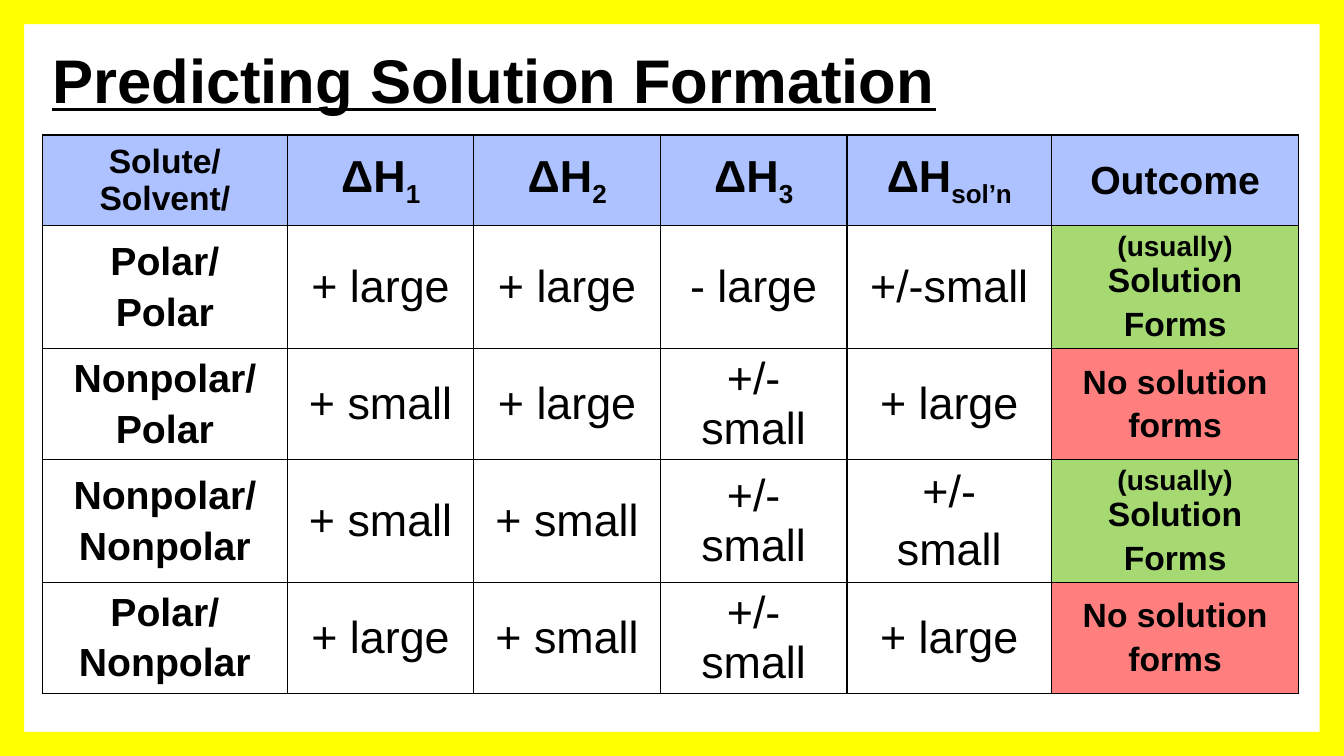
"""Build the slide that predicts solution formation from enthalpy terms."""
from dataclasses import dataclass

from lxml.etree import SubElement
from pptx import Presentation
from pptx.dml.color import RGBColor
from pptx.dml.fill import FillFormat
from pptx.enum.shapes import MSO_SHAPE
from pptx.enum.text import MSO_ANCHOR, PP_ALIGN
from pptx.oxml.ns import qn
from pptx.table import _Cell
from pptx.text.text import Font, _Paragraph
from pptx.util import Inches, Pt

BLACK, BLUE, GREEN, RED, YELLOW = "000000", "ADC2FF", "92D050", "FF0000", "FFFF00"
WIDTHS = [2.43, 1.85, 1.85, 1.85, 2.03, 2.45]
HEIGHTS = [0.9, 1.22, 1.1, 1.22, 1.1]


@dataclass
class Entry:
    lines: list[str]
    size: int
    bold: bool = True
    fill: str = ""
    alpha: int = 100
    sub: str = ""
    note: str = ""


def paint(fill: FillFormat, color: str) -> None:
    """Give a fill one solid colour."""
    fill.solid()
    fill.fore_color.rgb = RGBColor.from_string(color)


def style(font: Font, size: int, bold: bool) -> None:
    """Set the common font with a size and weight."""
    font.name = "Arial"
    font.size = Pt(size)
    font.bold = bold
    paint(font.fill, BLACK)


def border(cell: _Cell) -> None:
    """Draw a thin black line on all four sides of a cell."""
    props = cell._tc.get_or_add_tcPr()
    for side in ("lnL", "lnR", "lnT", "lnB"):
        line = SubElement(props, qn(f"a:{side}"), w=str(Pt(1)))
        SubElement(SubElement(line, qn("a:solidFill")), qn("a:srgbClr"), val=BLACK)


def lead(para: _Paragraph, note: str) -> None:
    """Start a paragraph with a smaller note on its own line."""
    run = para.add_run()
    run.text = note
    run.font.size = Pt(20)
    para.add_line_break()
    SubElement(para._p.find(qn("a:br")), qn("a:rPr"), sz="2000")


def write(cell: _Cell, entry: Entry) -> None:
    """Fill a table cell from its entry."""
    border(cell)
    if entry.fill:
        paint(cell.fill, entry.fill)
        if entry.alpha < 100:
            color = cell._tc.tcPr.find(qn("a:solidFill"))[0]
            SubElement(color, qn("a:alpha"), val=str(entry.alpha * 1000))
    else:
        cell.fill.background()
    cell.vertical_anchor = MSO_ANCHOR.MIDDLE
    frame = cell.text_frame
    for index, line in enumerate(entry.lines):
        para = frame.add_paragraph() if index else frame.paragraphs[0]
        para.alignment = PP_ALIGN.CENTER
        if index:
            para.space_before = Pt(round(entry.size * 0.18, 1))
        style(para.font, entry.size, entry.bold)
        if entry.note and not index:
            lead(para, entry.note)
        for part, text in enumerate(line.split("\v")):
            if part:
                para.add_line_break()
            para.add_run().text = text
        if entry.sub:
            run = para.add_run()
            run.text = entry.sub
            run._r.get_or_add_rPr().set("baseline", "-25000")


def row(pair: str, *terms: str, forms: bool) -> list[Entry]:
    """Describe one body row: the pair, its enthalpies and the outcome."""
    if forms:
        last = Entry(["Solution", "Forms"], 24, fill=GREEN, alpha=80, note="(usually)")
    else:
        last = Entry(["No solution", "forms"], 24, fill=RED, alpha=50)
    return [
        Entry(pair.split("\n"), 28),
        *(Entry(term.split("\n"), 32, bold=False) for term in terms),
        last,
    ]


def main() -> None:
    """Build and save the slide."""
    deck = Presentation()
    deck.slide_width, deck.slide_height = Inches(13.33), Inches(7.5)
    shapes = deck.slides.add_slide(deck.slide_layouts[6]).shapes

    head = [
        Entry(["Solute/\vSolvent/"], 24, fill=BLUE),
        *(Entry(["ΔH"], 32, fill=BLUE, sub=sub) for sub in ("1", "2", "3", "sol’n")),
        Entry(["Outcome"], 28, fill=BLUE),
    ]
    rows = [
        head,
        row("Polar/\nPolar", "+ large", "+ large", "- large", "+/-small", forms=True),
        row("Nonpolar/\nPolar", "+ small", "+ large", "+/- small", "+ large", forms=False),
        row("Nonpolar/\nNonpolar", "+ small", "+ small", "+/- small", "+/-\nsmall", forms=True),
        row("Polar/\nNonpolar", "+ large", "+ small", "+/- small", "+ large", forms=False),
    ]
    table = shapes.add_table(
        len(rows), len(WIDTHS), Inches(0.42), Inches(1.34),
        Inches(sum(WIDTHS)), Inches(sum(HEIGHTS)),
    ).table
    table.first_row = table.horz_banding = False
    for col, width in zip(table.columns, WIDTHS):
        col.width = Inches(width)
    for line, height, entries in zip(table.rows, HEIGHTS, rows):
        line.height = Inches(height)
        for cell, entry in zip(line.cells, entries):
            write(cell, entry)

    title = shapes.add_textbox(Inches(0.42), Inches(0.22), Inches(12.7), Inches(1.12)).text_frame
    title.word_wrap = True
    title.vertical_anchor = MSO_ANCHOR.MIDDLE
    para = title.paragraphs[0]
    para.text = "Predicting Solution Formation"
    style(para.font, 44, True)
    para.font.underline = True

    edge = shapes.add_shape(MSO_SHAPE.FRAME, 0, 0, deck.slide_width, deck.slide_height)
    edge.adjustments[0] = 0.032
    edge.shadow.inherit = False
    paint(edge.fill, YELLOW)
    edge.line.fill.background()

    deck.save("out.pptx")


if __name__ == "__main__":
    main()
